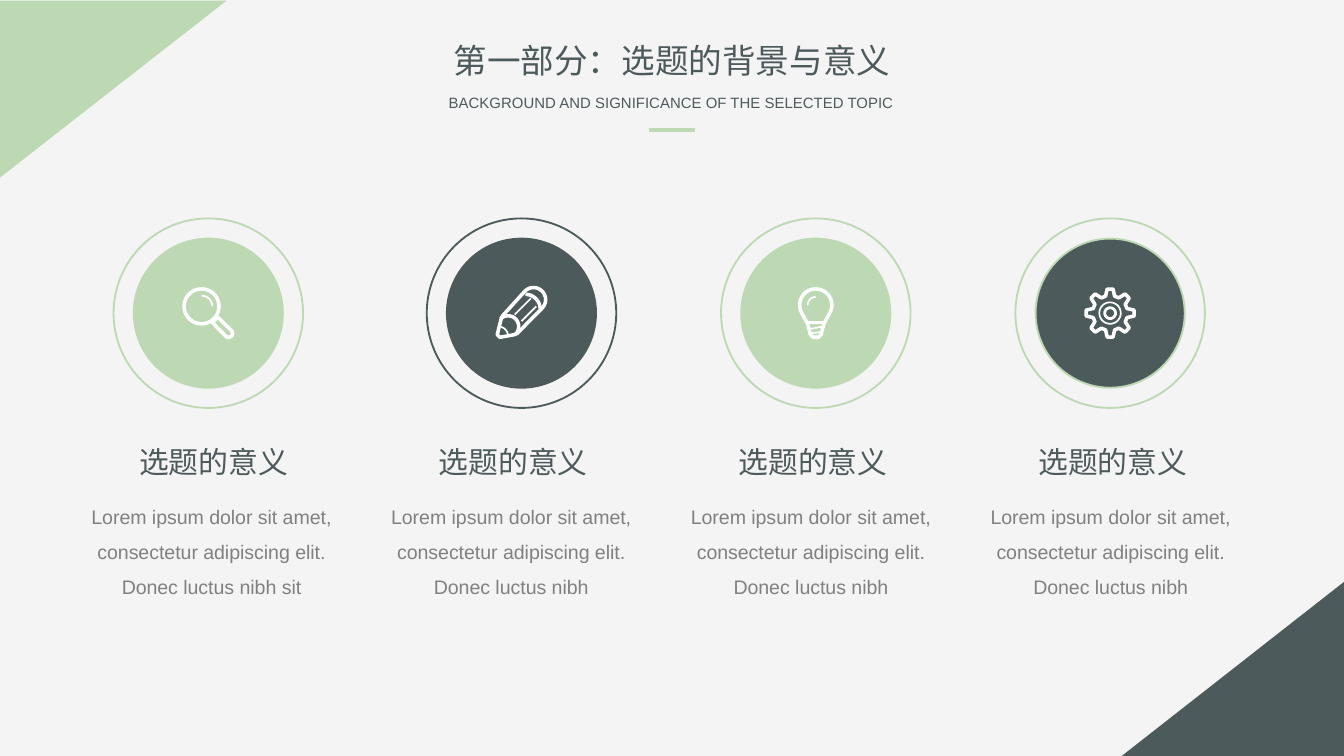
from dataclasses import dataclass
from math import cos, radians, sin

from lxml.etree import SubElement
from pptx import Presentation
from pptx.dml.color import RGBColor
from pptx.enum.shapes import MSO_CONNECTOR, MSO_SHAPE
from pptx.enum.text import MSO_AUTO_SIZE, PP_ALIGN
from pptx.oxml.ns import qn
from pptx.slide import Slide
from pptx.util import Inches, Pt

GREEN = RGBColor(0xBC, 0xD9, 0xB4)
SLATE = RGBColor(0x4D, 0x5A, 0x5C)
GRAY = RGBColor(0x80, 0x80, 0x80)
WHITE = RGBColor(0xFF, 0xFF, 0xFF)
PAPER = RGBColor(0xF4, 0xF4, 0xF4)
CHINESE_FONT = "Noto Sans CJK SC"
LATIN_FONT = "Arial"
THICK, THIN = 1.9, 0.9
BADGE_SIZE, RING_SIZE, BADGE_CENTER_Y = 1.11, 1.41, 2.33
COLUMN_PITCH = 2.23

Point = tuple[float, float]


@dataclass
class Stroke:
    points: list[Point]
    closed: bool = False
    width: float = THIN


@dataclass
class Topic:
    center_x: float
    fill: RGBColor
    line: RGBColor
    icon: list[Stroke]
    body: str


def arc(x: float, y: float, radius: float, start: int, end: int) -> list[Point]:
    steps = max(6, abs(end - start) // 10)
    angles = [radians(start + (end - start) * step / steps) for step in range(steps + 1)]
    return [(x + radius * cos(angle), y + radius * sin(angle)) for angle in angles]


def circle(x: float, y: float, radius: float, width: float) -> Stroke:
    return Stroke(arc(x, y, radius, 0, 350), True, width)


def gear_outline() -> list[Point]:
    corners = [(-15, 0.13), (-7, 0.18), (7, 0.18), (15, 0.13)]
    return [
        (radius * cos(radians(tooth + turn)), radius * sin(radians(tooth + turn)))
        for tooth in range(0, 360, 45)
        for turn, radius in corners
    ]


MAGNIFIER = [
    circle(-0.05, -0.05, 0.13, THICK),
    Stroke([(0.03, 0.07), *arc(0.15, 0.15, 0.03, 135, -45), (0.07, 0.03)], True, THICK),
    Stroke(arc(-0.05, -0.05, 0.08, -90, 0)),
]
PENCIL = [
    Stroke(
        [*arc(0.09, -0.1, 0.09, -135, 45), (-0.03, 0.15), (-0.05, 0.16),
         (-0.16, 0.18), (-0.18, 0.16), (-0.15, 0.04), (-0.14, 0.02)],
        True, THICK,
    ),
    Stroke(arc(0.03, -0.03, 0.11, -90, 0), width=THICK),
    Stroke(arc(-0.1, 0.1, 0.08, -135, 45), width=THICK),
    Stroke(arc(-0.17, 0.17, 0.07, -80, 0)),
    Stroke([(-0.05, 0.01), (0.07, -0.11)]),
    Stroke([(0, 0.06), (0.11, -0.05)]),
]
BULB = [
    Stroke(
        [*arc(0, -0.06, 0.12, 150, 390), (0.06, 0.08), (0.04, 0.16),
         (0.02, 0.18), (-0.02, 0.18), (-0.04, 0.16), (-0.06, 0.08)],
        True, THICK,
    ),
    Stroke([(-0.06, 0.07), (0.06, 0.07)], width=THICK),
    Stroke([(-0.05, 0.12), (0.05, 0.1)]),
    Stroke([(-0.04, 0.15), (0.04, 0.14)]),
    Stroke(arc(0, -0.06, 0.06, 180, 270)),
]
GEAR = [
    Stroke(gear_outline(), True, THICK),
    circle(0, 0, 0.08, THIN),
    circle(0, 0, 0.04, 1.5),
]

BODY = "Lorem ipsum dolor sit amet, consectetur adipiscing elit. Donec luctus nibh"
TOPICS = [
    Topic(1.55, GREEN, GREEN, MAGNIFIER, BODY + " sit"),
    Topic(3.88, SLATE, SLATE, PENCIL, BODY),
    Topic(6.07, GREEN, GREEN, BULB, BODY),
    Topic(8.26, SLATE, GREEN, GEAR, BODY),
]


def draw_triangle(slide: Slide, left: float, top: float, width: float, height: float,
                  rotation: int, color: RGBColor) -> None:
    shape = slide.shapes.add_shape(
        MSO_SHAPE.RIGHT_TRIANGLE, Inches(left), Inches(top), Inches(width), Inches(height))
    shape.rotation = rotation
    shape.shadow.inherit = False
    shape.fill.solid()
    shape.fill.fore_color.rgb = color
    shape.line.fill.background()


def draw_circle(slide: Slide, center_x: float, size: float, line: RGBColor,
                fill: RGBColor | None = None) -> None:
    shape = slide.shapes.add_shape(
        MSO_SHAPE.OVAL, Inches(center_x - size / 2), Inches(BADGE_CENTER_Y - size / 2),
        Inches(size), Inches(size))
    shape.shadow.inherit = False
    shape.line.color.rgb = line
    shape.line.width = Pt(1)
    if fill is None:
        shape.fill.background()
    else:
        shape.fill.solid()
        shape.fill.fore_color.rgb = fill


def draw_stroke(slide: Slide, center_x: float, stroke: Stroke) -> None:
    points = [(Inches(center_x + x), Inches(BADGE_CENTER_Y + y)) for x, y in stroke.points]
    builder = slide.shapes.build_freeform(*points[0])
    builder.add_line_segments(points[1:], close=stroke.closed)
    shape = builder.convert_to_shape()
    shape.shadow.inherit = False
    shape.fill.background()
    shape.line.color.rgb = WHITE
    shape.line.width = Pt(stroke.width)
    SubElement(shape._element.spPr.find(qn("a:ln")), qn("a:round"))


def draw_text(slide: Slide, left: float, top: float, width: float, height: float, text: str,
              size: float, font_name: str, color: RGBColor, wrap: bool = False,
              spacing: float = 1.0) -> None:
    shape = slide.shapes.add_textbox(Inches(left), Inches(top), Inches(width), Inches(height))
    frame = shape.text_frame
    paragraph = frame.paragraphs[0]
    run = paragraph.add_run()
    formats = {
        frame: {"word_wrap": wrap, "auto_size": MSO_AUTO_SIZE.SHAPE_TO_FIT_TEXT},
        paragraph: {"alignment": PP_ALIGN.CENTER, "line_spacing": spacing},
        run: {"text": text},
        run.font: {"size": Pt(size), "name": font_name},
    }
    for target, values in formats.items():
        for name, value in values.items():
            setattr(target, name, value)
    run.font.color.rgb = color
    SubElement(run.font._element, qn("a:ea"), typeface=font_name)


def draw_underline(slide: Slide) -> None:
    connector = slide.shapes.add_connector(
        MSO_CONNECTOR.STRAIGHT, Inches(4.83), Inches(0.97), Inches(5.17), Inches(0.97))
    connector.line.color.rgb = GREEN
    connector.line.width = Pt(2.25)
    SubElement(connector._element.spPr, qn("a:effectLst"))


def main() -> None:
    presentation = Presentation()
    presentation.slide_width = Inches(10)
    presentation.slide_height = Inches(10 * 9 / 16)
    slide = presentation.slides.add_slide(presentation.slide_layouts[6])
    slide.background.fill.solid()
    slide.background.fill.fore_color.rgb = PAPER

    draw_triangle(slide, 0.18, -0.18, 1.32, 1.69, 90, GREEN)
    draw_triangle(slide, 8.52, 4.15, 1.3, 1.66, 270, SLATE)
    draw_text(slide, 3.26, 0.25, 3.48, 0.4, "第一部分：选题的背景与意义", 18, CHINESE_FONT, SLATE)
    draw_text(slide, 3.22, 0.65, 3.55, 0.24,
              "BACKGROUND AND SIGNIFICANCE OF THE SELECTED TOPIC", 8, LATIN_FONT, SLATE)
    draw_underline(slide)

    for column, topic in enumerate(TOPICS):
        draw_circle(slide, topic.center_x, BADGE_SIZE, topic.line, topic.fill)
        draw_circle(slide, topic.center_x, RING_SIZE, topic.line)
        for stroke in topic.icon:
            draw_stroke(slide, topic.center_x, stroke)
        offset = column * COLUMN_PITCH
        draw_text(slide, 0.93 + offset, 3.25, 1.32, 0.37, "选题的意义", 16, CHINESE_FONT, SLATE)
        draw_text(slide, 0.44 + offset, 3.62, 2.27, 0.87, topic.body, 10.5, LATIN_FONT, GRAY,
                  wrap=True, spacing=1.5)

    presentation.save("out.pptx")


if __name__ == "__main__":
    main()
